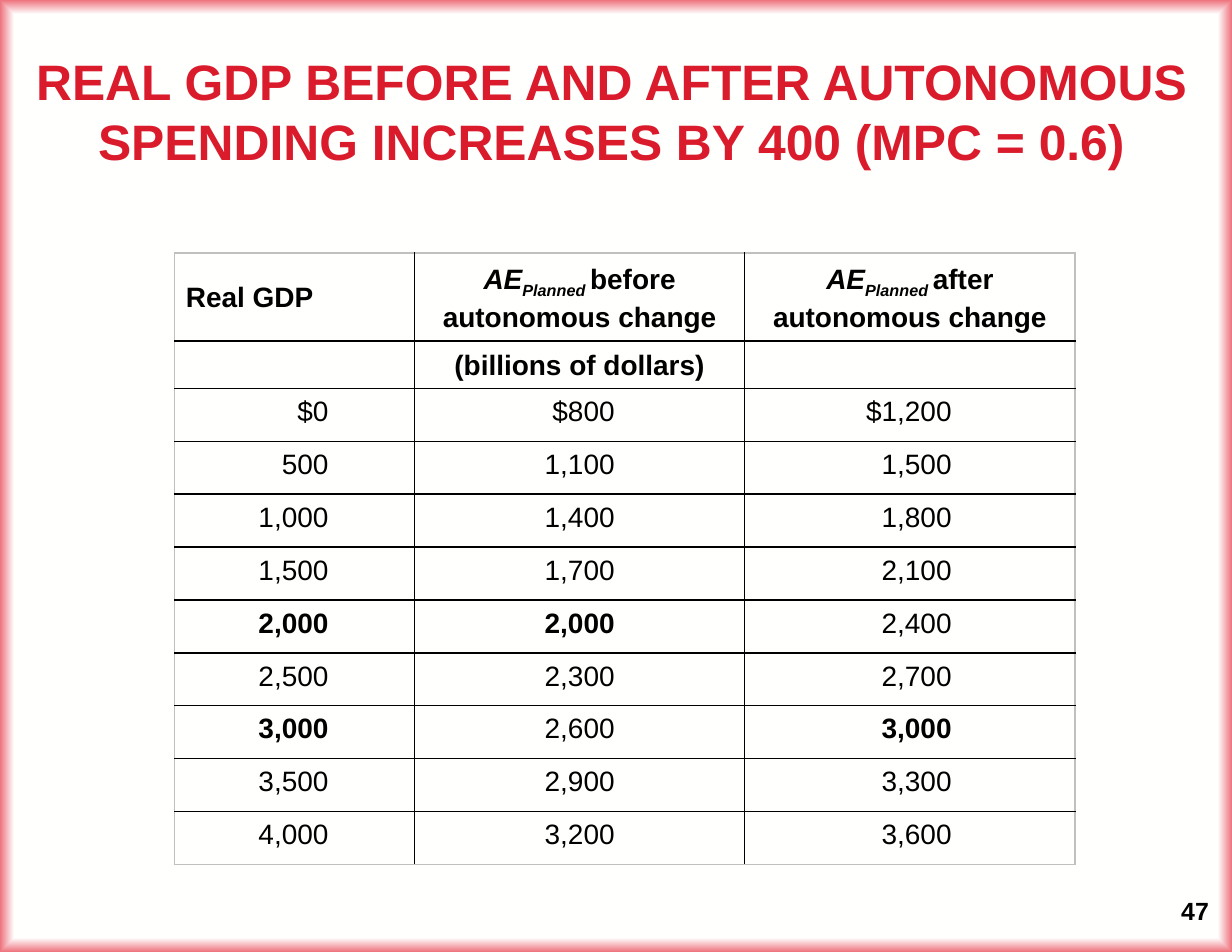
from dataclasses import dataclass

from lxml import etree
from pptx import Presentation
from pptx.dml.color import RGBColor
from pptx.enum.text import MSO_ANCHOR, PP_ALIGN
from pptx.oxml import parse_xml
from pptx.oxml.ns import nsdecls, qn
from pptx.util import Cm, Pt

LEFT, CENTER, RIGHT = PP_ALIGN.LEFT, PP_ALIGN.CENTER, PP_ALIGN.RIGHT
MIDDLE, TOP = MSO_ANCHOR.MIDDLE, MSO_ANCHOR.TOP
COLORS = {
    "text": "000000",
    "title": "DA1B2C",
    "paper": "FFFFFE",
    "edge": "ED727D",
    "outer": "C0C0C0",
}
FONT = "Arial"
HEADER_HEIGHT, UNIT_HEIGHT, DATA_HEIGHT = 1.88, 1.07, 1.2


@dataclass(frozen=True)
class Column:
    width: float
    right_margin: float
    values: tuple[str, ...]
    equilibrium: str


COLUMNS = (
    Column(5.44, 1.95, ("$0", "500", "1,000", "1,500", "2,000", "2,500",
                        "3,000", "3,500", "4,000"), "2,000 3,000"),
    Column(7.49, 2.95, ("$800", "1,100", "1,400", "1,700", "2,000", "2,300",
                        "2,600", "2,900", "3,200"), "2,000"),
    Column(7.49, 2.8, ("$1,200", "1,500", "1,800", "2,100", "2,400", "2,700",
                       "3,000", "3,300", "3,600"), "3,000"),
)


def add_run(paragraph, text: str, size: int, color: str = "text",
            bold: bool = True, italic: bool = False):
    run = paragraph.add_run()
    run.text = text
    formats = {"name": FONT, "size": Pt(size), "bold": bold, "italic": italic}
    for attribute, value in formats.items():
        setattr(run.font, attribute, value)
    run.font.color.rgb = RGBColor.from_string(COLORS[color])
    return run


def paint_background(slide) -> None:
    slide.background.fill.solid()
    properties = slide.element.find(".//" + qn("p:bgPr"))
    stops = "".join(
        f'<a:gs pos="{position}"><a:srgbClr val="{COLORS[name]}"/></a:gs>'
        for position, name in ((0, "paper"), (97000, "paper"), (100000, "edge"))
    )
    gradient = parse_xml(
        f'<a:gradFill {nsdecls("a")} rotWithShape="1"><a:gsLst>{stops}</a:gsLst>'
        '<a:path path="shape"><a:fillToRect l="50000" t="50000" r="50000" b="50000"/>'
        '</a:path></a:gradFill>'
    )
    properties.replace(properties.find(qn("a:solidFill")), gradient)


def set_borders(cell, sides: dict[str, str]) -> None:
    properties = cell._tc.get_or_add_tcPr()
    for index, (side, color) in enumerate(sides.items()):
        line = etree.Element(qn(f"a:ln{side}"), w=str(Pt(1)))
        fill = etree.SubElement(line, qn("a:solidFill"))
        etree.SubElement(fill, qn("a:srgbClr"), val=COLORS[color])
        properties.insert(index, line)


def write_cell(cell, text: str, alignment, bold: bool = True) -> None:
    paragraph = cell.text_frame.paragraphs[0]
    paragraph.alignment = alignment
    paragraph.line_spacing = 1.07
    add_run(paragraph, text, 18, bold=bold)


def write_spending_header(cell, moment: str) -> None:
    first = cell.text_frame.paragraphs[0]
    second = cell.text_frame.add_paragraph()
    for paragraph in (first, second):
        paragraph.alignment = CENTER
        paragraph.line_spacing = 1.07
    add_run(first, "AE", 18, italic=True)
    planned = add_run(first, "Planned ", 18, italic=True)
    planned.font._element.set("baseline", "-25000")
    add_run(first, moment, 18)
    add_run(second, "autonomous change", 18)


def add_spending_table(slide) -> None:
    heights = [HEADER_HEIGHT, UNIT_HEIGHT] + [DATA_HEIGHT] * len(COLUMNS[0].values)
    width = sum(column.width for column in COLUMNS)
    table = slide.shapes.add_table(
        len(heights), len(COLUMNS), Cm(3.96), Cm(5.74), Cm(width), Cm(sum(heights))
    ).table
    for flag in ("first_row", "horz_banding"):
        setattr(table, flag, False)
    last_row, last_column = len(heights) - 1, len(COLUMNS) - 1

    for row, height in enumerate(heights):
        table.rows[row].height = Cm(height)
        for column in range(len(COLUMNS)):
            cell = table.cell(row, column)
            cell.fill.background()
            cell.vertical_anchor = MIDDLE if row < 2 else TOP
            cell.text_frame.paragraphs[0].font.size = Pt(18)
            set_borders(cell, {
                "L": "outer" if column == 0 else "text",
                "R": "outer" if column == last_column else "text",
                "T": "outer" if row == 0 else "text",
                "B": "outer" if row == last_row else "text",
            })

    write_cell(table.cell(0, 0), "Real GDP", LEFT)
    for column, moment in enumerate(("before", "after"), start=1):
        write_spending_header(table.cell(0, column), moment)
    write_cell(table.cell(1, 1), "(billions of dollars)", CENTER)

    for index, column in enumerate(COLUMNS):
        table.columns[index].width = Cm(column.width)
        for row, value in enumerate(column.values, start=2):
            cell = table.cell(row, index)
            cell.margin_right = Cm(column.right_margin)
            write_cell(cell, value, RIGHT, value in column.equilibrium.split())


def add_title(slide) -> None:
    title = slide.shapes.title
    place = {"left": Cm(0), "top": Cm(0.05), "width": Cm(27.76), "height": Cm(4.93)}
    for attribute, value in place.items():
        setattr(title, attribute, value)
    frame = title.text_frame
    frame.vertical_anchor = MIDDLE
    for side in ("left", "right", "top", "bottom"):
        setattr(frame, f"margin_{side}", Cm(0.25))
    paragraph = frame.paragraphs[0]
    paragraph.alignment = CENTER
    add_run(paragraph,
            "REAL GDP BEFORE AND AFTER AUTONOMOUS SPENDING INCREASES BY 400 (MPC = 0.6)",
            32, "title")


def add_page_number(slide) -> None:
    page_number = slide.shapes.add_textbox(Cm(26.54), Cm(20.19), Cm(1.22), Cm(0.94))
    page_number.text_frame.word_wrap = False
    add_run(page_number.text_frame.paragraphs[0], "47", 16)


def main() -> None:
    presentation = Presentation()
    presentation.slide_width = Cm(27.94)
    presentation.slide_height = Cm(21.59)
    slide = presentation.slides.add_slide(presentation.slide_layouts[5])
    paint_background(slide)
    add_page_number(slide)
    add_title(slide)
    add_spending_table(slide)
    presentation.save("out.pptx")


if __name__ == "__main__":
    main()
